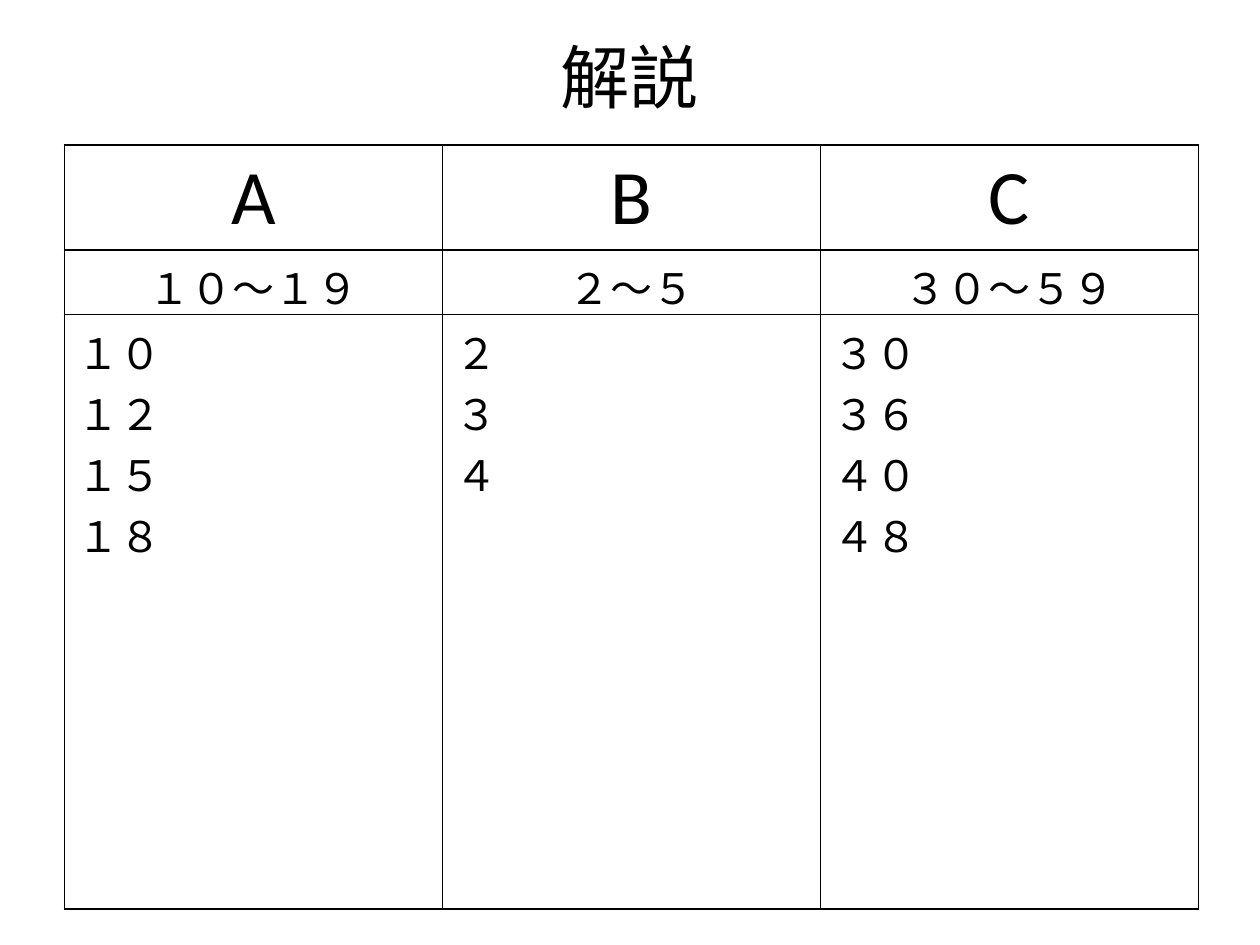
from lxml import etree
from pptx import Presentation
from pptx.dml.color import RGBColor
from pptx.enum.text import MSO_ANCHOR, PP_ALIGN
from pptx.oxml.ns import qn
from pptx.util import Cm, Pt

CENTER, LEFT = PP_ALIGN.CENTER, PP_ALIGN.LEFT
MIDDLE = MSO_ANCHOR.MIDDLE
COLORS = {"ink": "000000"}
INK = RGBColor.from_string(COLORS["ink"])


def write(frame, lines, size, align):
    font_format = {"name": "Calibri", "size": Pt(size), "bold": False}
    for i, line in enumerate(lines):
        paragraph = frame.paragraphs[0] if i == 0 else frame.add_paragraph()
        paragraph.alignment = align
        run = paragraph.add_run()
        run.text = line
        for key, value in font_format.items():
            setattr(run.font, key, value)
        run.font.color.rgb = INK


def add_borders(cell):
    properties = cell._tc.get_or_add_tcPr()
    for position, side in enumerate(("a:lnL", "a:lnR", "a:lnT", "a:lnB")):
        border = etree.Element(qn(side), w=str(Pt(1)))
        fill = etree.SubElement(border, qn("a:solidFill"))
        etree.SubElement(fill, qn("a:srgbClr"), val=COLORS["ink"])
        properties.insert(position, border)


presentation = Presentation()
presentation.slide_width, presentation.slide_height = Cm(25.4), Cm(19.05)
slide = presentation.slides.add_slide(presentation.slide_layouts[6])

# Title
heading = slide.shapes.add_textbox(Cm(1.27), Cm(0.76), Cm(22.86), Cm(1.55)).text_frame
for key, value in {"word_wrap": True, "vertical_anchor": MIDDLE}.items():
    setattr(heading, key, value)
write(heading, ["解説"], 39.6, CENTER)

# Answer table: letter, range of values, possible values
answers = [
    ("A", "１０～１９", ["１０", "１２", "１５", "１８"]),
    ("B", "２～５", ["２", "３", "４"]),
    ("C", "３０～５９", ["３０", "３６", "４０", "４８"]),
]
row_heights = [1.88, 1.3, 11.99]
answer_table = slide.shapes.add_table(
    len(row_heights), len(answers), Cm(1.3), Cm(2.92), Cm(22.86), Cm(sum(row_heights))
).table
for option, value in {"first_row": False, "horz_banding": False}.items():
    setattr(answer_table, option, value)
for row, height in zip(answer_table.rows, row_heights):
    row.height = Cm(height)

for col, (letter, value_range, values) in enumerate(answers):
    answer_table.columns[col].width = Cm(7.62)
    entries = [([letter], 44, CENTER), ([value_range], 24, CENTER), (values, 24, LEFT)]
    for row, (lines, size, align) in enumerate(entries):
        cell = answer_table.cell(row, col)
        cell.fill.background()
        add_borders(cell)
        write(cell.text_frame, lines, size, align)

presentation.save("out.pptx")
